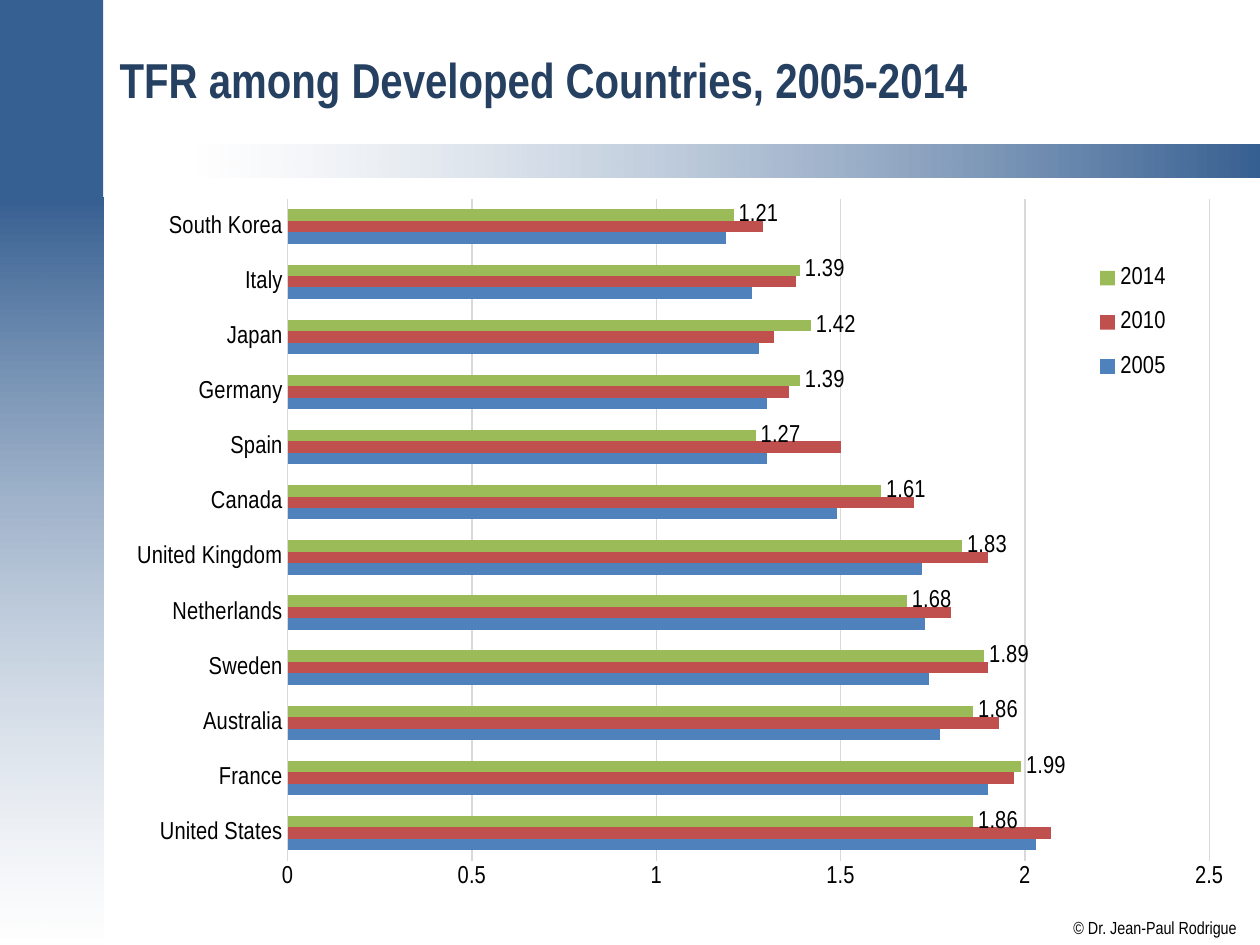
from dataclasses import dataclass

from lxml.etree import SubElement
from pptx import Presentation
from pptx.chart.data import CategoryChartData
from pptx.dml.color import RGBColor
from pptx.enum.chart import XL_CHART_TYPE as ChartType
from pptx.enum.chart import XL_LABEL_POSITION as LabelPosition
from pptx.enum.chart import XL_LEGEND_POSITION as LegendPosition
from pptx.enum.chart import XL_TICK_MARK as TickMark
from pptx.enum.shapes import MSO_SHAPE as Shape
from pptx.enum.text import MSO_ANCHOR as Anchor
from pptx.enum.text import PP_ALIGN as Align
from pptx.oxml.ns import qn
from pptx.util import Inches, Pt


@dataclass(frozen=True)
class Theme:
    """Colours, font and type sizes of the deck."""
    font: str = "Arial Narrow"
    band: str = "376092"
    heading: str = "254061"
    ink: str = "000000"
    paper: str = "FFFFFF"
    grid: str = "D9D9D9"
    series: tuple = ("4F81BD", "C0504D", "9BBB59")
    title_size: int = 28
    chart_size: int = 14
    credit_size: int = 10


THEME = Theme()
YEARS = ("2005", "2010", "2014")
RATES = {
    "United States": (2.03, 2.07, 1.86),
    "France": (1.9, 1.97, 1.99),
    "Australia": (1.77, 1.93, 1.86),
    "Sweden": (1.74, 1.9, 1.89),
    "Netherlands": (1.73, 1.8, 1.68),
    "United Kingdom": (1.72, 1.9, 1.83),
    "Canada": (1.49, 1.7, 1.61),
    "Spain": (1.3, 1.5, 1.27),
    "Germany": (1.3, 1.36, 1.39),
    "Japan": (1.28, 1.32, 1.42),
    "Italy": (1.26, 1.38, 1.39),
    "South Korea": (1.19, 1.29, 1.21),
}


def inches(*lengths):
    """Convert a box in inches to slide lengths."""
    return [Inches(length) for length in lengths]


def format_font(font, size, color=THEME.ink, bold=False):
    """Set the theme typeface with a size, colour and weight."""
    font.name, font.size, font.bold = THEME.font, Pt(size), bold
    font.color.rgb = RGBColor.from_string(color)


def write_text(frame, text, size, color=THEME.ink, bold=False,
               anchor=Anchor.TOP, wrap=True):
    """Fill a text frame with one formatted, left-aligned paragraph."""
    frame.word_wrap, frame.vertical_anchor = wrap, anchor
    para = frame.paragraphs[0]
    para.alignment = Align.LEFT
    span = para.add_run()
    span.text = text
    format_font(span.font, size, color, bold)


def add_band(page, box, stops=(), angle=0):
    """Add a solid band, or a gradient one from (colour, opacity) stops."""
    band = page.shapes.add_shape(Shape.RECTANGLE, *inches(*box))
    band.shadow.inherit = False
    band.line.fill.background()
    if not stops:
        band.fill.solid()
        band.fill.fore_color.rgb = RGBColor.from_string(THEME.band)
        return
    band.fill.gradient()
    band.fill.gradient_angle = angle
    for stop, (color, opacity) in zip(band.fill.gradient_stops, stops):
        stop.color.rgb = RGBColor.from_string(color)
    for node, (color, opacity) in zip(band._element.iter(qn("a:srgbClr")), stops):
        if opacity < 100:
            SubElement(node, qn("a:alpha")).set("val", str(opacity * 1000))


def add_frame(page):
    """Draw the side and header bands."""
    add_band(page, (-0.01, 1.57, 0.83, 5.93),
             ((THEME.band, 100), (THEME.paper, 51)), angle=270)
    add_band(page, (1.57, 1.15, 8.43, 0.26),
             ((THEME.paper, 50), (THEME.band, 100)))
    add_band(page, (-0.01, -0.01, 0.83, 1.58))


def add_title(page, box, text):
    """Place and format the title placeholder."""
    title = page.shapes.title
    title.left, title.top, title.width, title.height = inches(*box)
    write_text(title.text_frame, text, THEME.title_size, THEME.heading,
               bold=True, anchor=Anchor.MIDDLE)


def add_credit(page, box, text):
    """Add the copyright line."""
    frame = page.shapes.add_textbox(*inches(*box)).text_frame
    frame.margin_left = frame.margin_right = Inches(0)
    frame.margin_top = frame.margin_bottom = Inches(0)
    write_text(frame, text, THEME.credit_size, wrap=False)


def set_layout(parent, x, y, width, height, inner=False):
    """Fix a chart part at fractions of the chart area."""
    layout = parent.find(qn("c:layout"))
    if layout is None:
        layout = parent.makeelement(qn("c:layout"))
        parent.insert(1 if parent.tag == qn("c:legend") else 0, layout)
    manual = SubElement(layout, qn("c:manualLayout"))
    settings = [("layoutTarget", "inner")] if inner else []
    settings += [("xMode", "edge"), ("yMode", "edge"),
                 ("x", x), ("y", y), ("w", width), ("h", height)]
    for name, value in settings:
        SubElement(manual, qn(f"c:{name}")).set("val", str(value))


def style_axes(chart):
    """Format the country and rate axes."""
    rates, countries = chart.value_axis, chart.category_axis
    rates.minimum_scale, rates.maximum_scale, rates.major_unit = 0, 2.5, 0.5
    for axis in (rates, countries):
        axis.major_tick_mark = axis.minor_tick_mark = TickMark.NONE
        format_font(axis.tick_labels.font, THEME.chart_size)
    rates.tick_labels.number_format = "General"
    rates.tick_labels.number_format_is_linked = False
    rates.format.line.fill.background()
    for line in (countries.format.line, rates.major_gridlines.format.line):
        line.color.rgb = RGBColor.from_string(THEME.grid)
        line.width = Pt(0.75)


def add_rates_chart(page, box):
    """Add the clustered bars of fertility rates by country."""
    data = CategoryChartData()
    data.categories = list(RATES)
    for year, values in zip(YEARS, zip(*RATES.values())):
        data.add_series(year, values)
    chart = page.shapes.add_chart(ChartType.BAR_CLUSTERED, *inches(*box), data).chart
    format_font(chart.font, THEME.chart_size)
    chart.has_title = False
    style_axes(chart)
    plot = chart.plots[0]
    plot.gap_width, plot.overlap, plot.vary_by_categories = 182, 0, False
    for series, color in zip(plot.series, THEME.series):
        series.invert_if_negative = False
        series.format.fill.solid()
        series.format.fill.fore_color.rgb = RGBColor.from_string(color)
    labels = plot.series[-1].data_labels
    labels.show_value, labels.position = True, LabelPosition.OUTSIDE_END
    labels.number_format, labels.number_format_is_linked = "#,##0.00", False
    format_font(labels.font, THEME.chart_size)
    chart.has_legend = True
    legend = chart.legend
    legend.position, legend.include_in_layout = LegendPosition.BOTTOM, False
    format_font(legend.font, THEME.chart_size)
    set_layout(legend._element, 0.86, 0.09, 0.09, 0.21)
    plot_area = chart._chartSpace.find(f".//{qn('c:plotArea')}")
    set_layout(plot_area, 0.161, 0.026, 0.811, 0.907, inner=True)


def main():
    """Build and save the slide."""
    deck = Presentation()
    deck.slide_width, deck.slide_height = inches(10, 7.5)
    page = deck.slides.add_slide(deck.slide_layouts[5])
    add_frame(page)
    add_credit(page, (8.52, 7.28, 1.3, 0.17), "© Dr. Jean-Paul Rodrigue")
    add_title(page, (0.85, 0.11, 8.98, 1.04),
              "TFR among Developed Countries, 2005-2014")
    add_rates_chart(page, (0.83, 1.43, 9.02, 5.79))
    deck.save("out.pptx")


if __name__ == "__main__":
    main()
